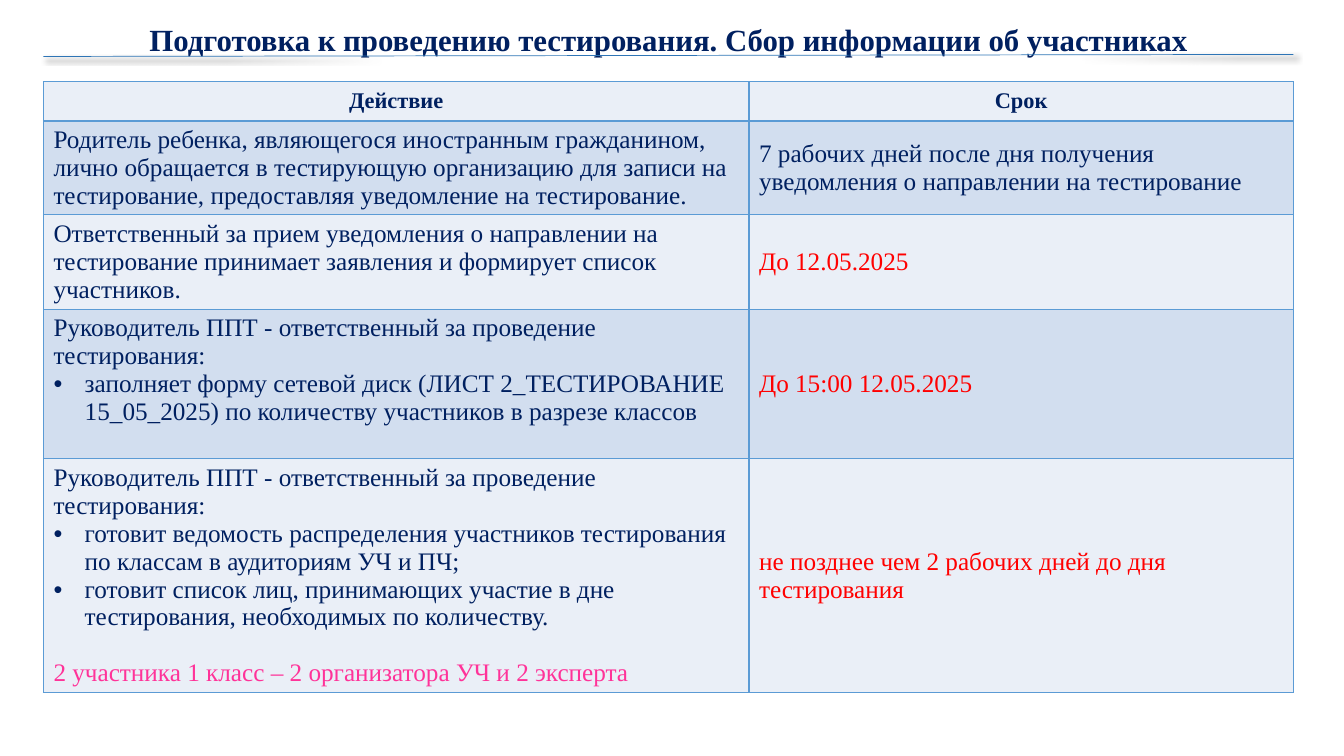
from dataclasses import dataclass

from lxml.etree import SubElement
from pptx import Presentation
from pptx.dml.color import RGBColor
from pptx.enum.shapes import MSO_CONNECTOR
from pptx.enum.text import MSO_ANCHOR, MSO_AUTO_SIZE, PP_ALIGN
from pptx.oxml.ns import qn
from pptx.util import Emu, Inches, Pt

HUES = {"navy": "002060", "red": "FF0000", "pink": "FF3399", "rule": "2E75B6",
        "edge": "5B9BD5", "pale": "EAEFF7", "band": "D2DEEF", "shade": "000000"}
FACE = "Times New Roman"
WIDE, HIGH = Inches(13.33), Inches(7.5)

# Percent of the slide's width or height
LEFT, SPAN = 3.23, 93
TOP = 10.8
COLS = (52.5, 40.5)
ROWS = (5.2, 12.4, 12.5, 19.8, 30.9)


@dataclass
class Para:
    text: str
    hue: str = "navy"
    size: int = 18
    bold: bool = False
    align: PP_ALIGN = PP_ALIGN.LEFT
    bullet: bool = False
    before: int = 0


@dataclass
class Row:
    task: list[Para]
    term: list[Para]


def head(text: str, size: int = 16) -> Para:
    return Para(text, size=size, bold=True, align=PP_ALIGN.CENTER)


def item(text: str) -> Para:
    return Para(text, bullet=True)


LEAD = Para("Руководитель ППТ - ответственный за проведение тестирования:")
PLAN = [
    Row([head("Действие")], [head("Срок")]),
    Row([Para("Родитель ребенка, являющегося иностранным гражданином, лично обращается "
              "в тестирующую организацию для записи на тестирование, предоставляя "
              "уведомление на тестирование.")],
        [Para("7 рабочих дней после дня получения уведомления о направлении "
              "на тестирование")]),
    Row([Para("Ответственный за прием уведомления о направлении на тестирование "
              "принимает заявления и формирует список участников.")],
        [Para("До 12.05.2025", "red")]),
    Row([LEAD,
         item("заполняет форму сетевой диск (ЛИСТ 2_ТЕСТИРОВАНИЕ 15_05_2025) "
              "по количеству участников в разрезе классов")],
        [Para("До 15:00 12.05.2025", "red")]),
    Row([LEAD,
         item("готовит ведомость распределения участников тестирования по классам "
              "в аудиториям УЧ и ПЧ;"),
         item("готовит список лиц, принимающих участие в дне тестирования, "
              "необходимых по количеству."),
         Para("2 участника 1 класс – 2 организатора УЧ и 2 эксперта", "pink",
              before=20)],
        [Para("не позднее чем 2 рабочих дней до дня тестирования", "red")]),
]


def across(share: float) -> Emu:
    return Emu(int(WIDE * share / 100))


def down(share: float) -> Emu:
    return Emu(int(HIGH * share / 100))


def apply(thing, form: dict) -> None:
    for key, value in form.items():
        setattr(thing, key, value)


def tint(node, hue: str):
    fill = SubElement(node, qn("a:solidFill"))
    return SubElement(fill, qn("a:srgbClr"), val=HUES[hue])


def write(frame, paras: list[Para]) -> None:
    for pos, para in enumerate(paras):
        line = frame.add_paragraph() if pos else frame.paragraphs[0]
        apply(line, {"alignment": para.align, "space_before": Pt(para.before)})
        run = line.add_run()
        run.text = para.text
        apply(run.font, {"name": FACE, "size": Pt(para.size), "bold": para.bold})
        run.font.color.rgb = RGBColor.from_string(HUES[para.hue])
        if para.bullet:
            props = line._p.get_or_add_pPr()
            dent = Inches(0.31)
            props.set("marL", str(dent))
            props.set("indent", str(-dent))
            SubElement(props, qn("a:buFont"), typeface="Arial")
            SubElement(props, qn("a:buChar"), char="•")


def border(cell) -> None:
    props = cell._tc.get_or_add_tcPr()
    for pos, side in enumerate(("lnL", "lnR", "lnT", "lnB")):
        edge = SubElement(props, qn(f"a:{side}"), w=str(Pt(1)))
        tint(edge, "edge")
        props.remove(edge)
        props.insert(pos, edge)


def add_title(slide) -> None:
    title = slide.shapes.title
    apply(title, {"left": across(LEFT), "top": 0, "width": across(SPAN),
                  "height": down(8.4)})
    frame = title.text_frame
    apply(frame, {"word_wrap": True, "auto_size": MSO_AUTO_SIZE.NONE,
                  "vertical_anchor": MSO_ANCHOR.BOTTOM})
    write(frame, [head("Подготовка к проведению тестирования. "
                       "Сбор информации об участниках", 22)])
    frame.paragraphs[0].line_spacing = 0.9


def add_plan(slide) -> None:
    table = slide.shapes.add_table(len(ROWS), len(COLS), across(LEFT), down(TOP),
                                   across(sum(COLS)), down(sum(ROWS))).table
    apply(table, {"first_row": False, "horz_banding": False})
    for col, share in zip(table.columns, COLS):
        col.width = across(share)
    for pos, (row, share) in enumerate(zip(PLAN, ROWS)):
        table.rows[pos].height = down(share)
        hue = "band" if pos % 2 else "pale"
        for col, paras in enumerate((row.task, row.term)):
            cell = table.cell(pos, col)
            top = pos and col == 0
            cell.vertical_anchor = MSO_ANCHOR.TOP if top else MSO_ANCHOR.MIDDLE
            cell.fill.solid()
            cell.fill.fore_color.rgb = RGBColor.from_string(HUES[hue])
            border(cell)
            write(cell.text_frame, paras)


def add_rule(slide) -> None:
    rule = slide.shapes.add_connector(MSO_CONNECTOR.STRAIGHT, across(LEFT), down(7.47),
                                      across(LEFT + SPAN), down(7.2))
    rule.line.width = Pt(0.5)
    rule.line.color.rgb = RGBColor.from_string(HUES["rule"])
    glow = SubElement(rule._element.spPr, qn("a:effectLst"))
    cast = SubElement(glow, qn("a:outerShdw"), blurRad=str(Pt(4)), dist=str(Pt(3)),
                      dir=str(45 * 60000), algn="tl", rotWithShape="0")
    shade = SubElement(cast, qn("a:srgbClr"), val=HUES["shade"])
    SubElement(shade, qn("a:alpha"), val="40000")


def main() -> None:
    deck = Presentation()
    apply(deck, {"slide_width": WIDE, "slide_height": HIGH})
    slide = deck.slides.add_slide(deck.slide_layouts[5])
    for draw in (add_title, add_plan, add_rule):
        draw(slide)
    deck.save("out.pptx")


if __name__ == "__main__":
    main()
